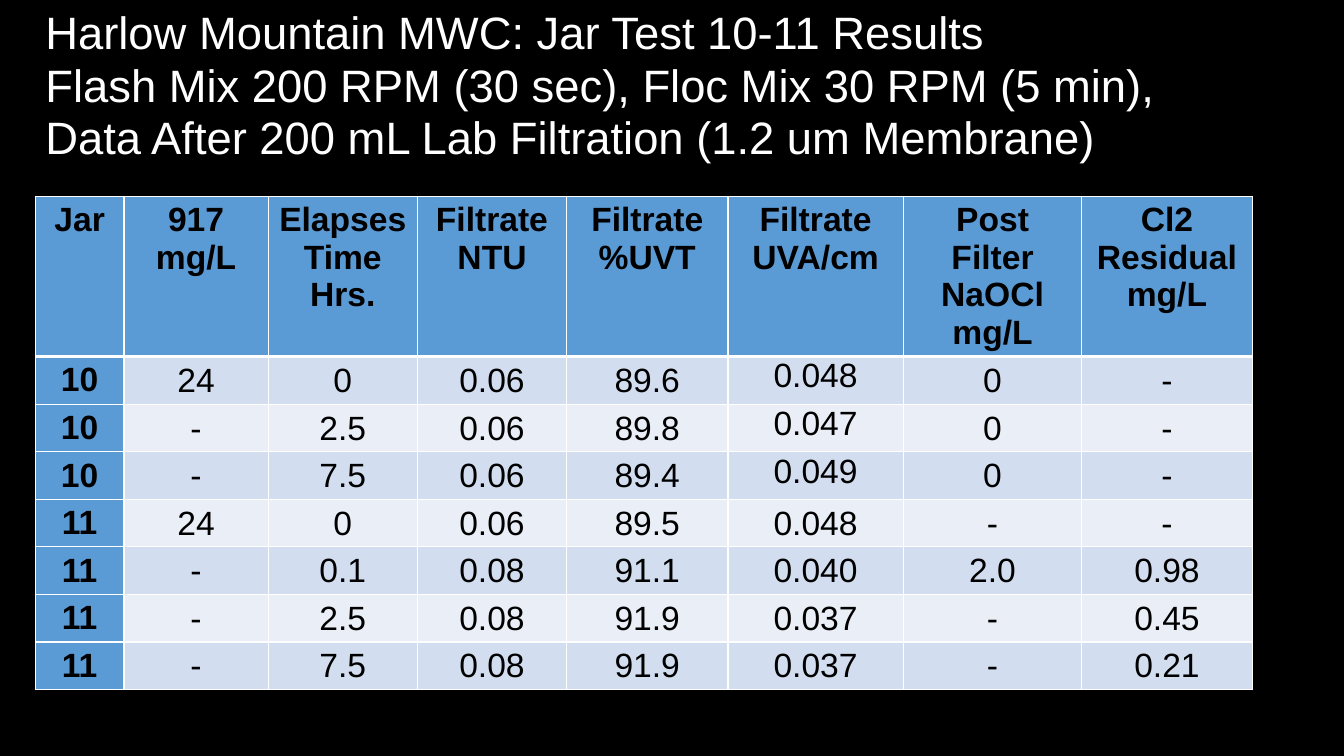
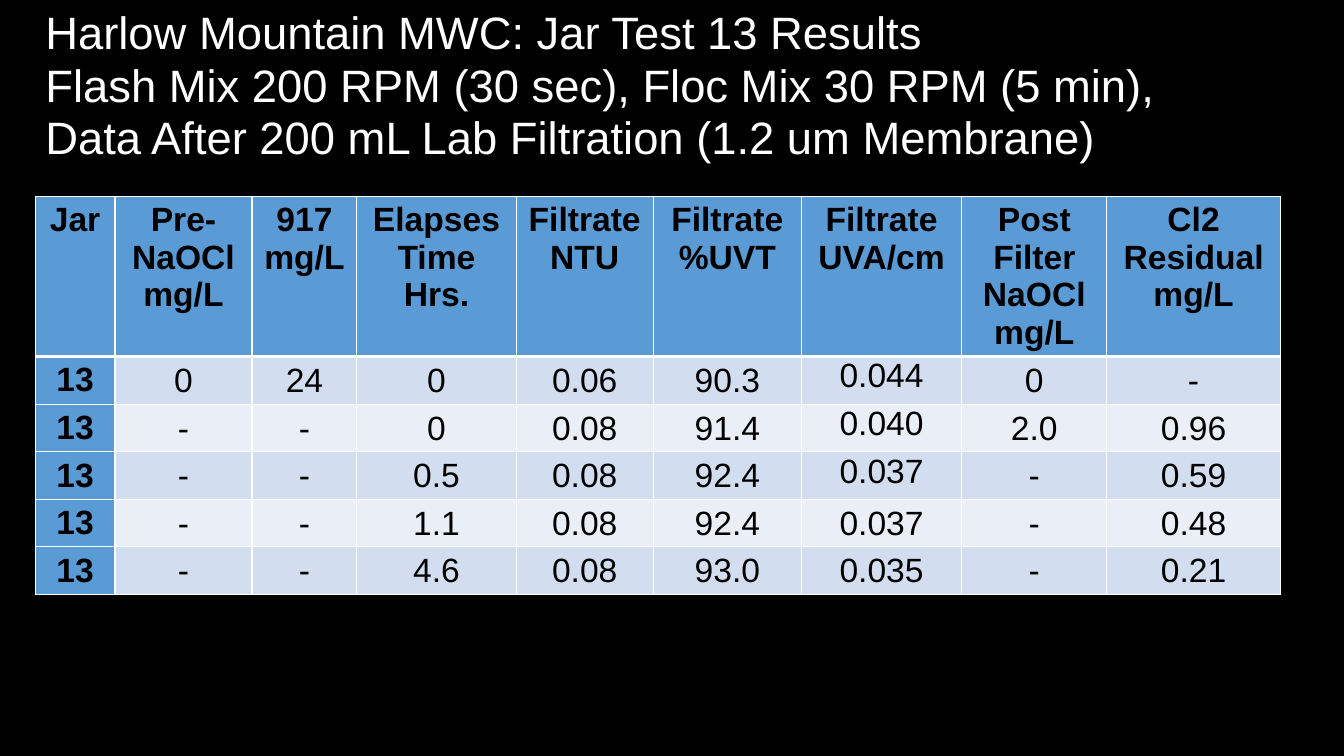
from copy import deepcopy

from pptx import Presentation
from pptx.dml.color import RGBColor
from pptx.enum.text import MSO_ANCHOR as Anchor, MSO_AUTO_SIZE as AutoSize, PP_ALIGN as Align
from pptx.oxml import parse_xml
from pptx.oxml.ns import nsdecls, qn
from pptx.util import Inches, Pt

COLORS = {
    "background": "000000",
    "title": "FFFFFF",
    "text": "000000",
    "border": "FFFFFF",
    "header": "5B9BD5",
    "odd_row": "D2DEEF",
    "even_row": "EAEFF7",
}
CONDITIONS = (
    "Flash Mix 200 RPM (30 sec), Floc Mix 30 RPM (5 min), "
    "Data After 200 mL Lab Filtration (1.2 um Membrane)"
)
DOSE_HEADER = "917\nmg/L"
RESULT_HEADERS = [
    "Elapses\nTime\nHrs.",
    "Filtrate\nNTU",
    "Filtrate\n%UVT",
    "Filtrate\nUVA/cm",
    "Post Filter NaOCl\nmg/L",
    "Cl2\nResidual\nmg/L",
]
TOP_ANCHORED_ROWS = (1, 2, 3)


def color(name):
    return RGBColor.from_string(COLORS[name])


class JarTestDeck:
    font = "Arial"
    left = 0.35
    title_size = 32.4
    table_size = 24
    header_height = 1.54
    row_height = 0.45

    def __init__(self):
        self.presentation = Presentation()
        self.presentation.slide_width = Inches(13.33)
        self.presentation.slide_height = Inches(7.5)
        fill = self.presentation.slide_master.background.fill
        fill.solid()
        fill.fore_color.rgb = color("background")
        self.slide = None

    def add_slide(self, title):
        layout = self.presentation.slide_layouts.get_by_name("Title Only")
        self.slide = self.presentation.slides.add_slide(layout)
        self.set_title(title)

    def style_run(self, run, size, color_name, bold=False):
        run.font.name = self.font
        run.font.size = Pt(size)
        run.font.bold = bold
        run.font.color.rgb = color(color_name)

    def set_title(self, title):
        shape = self.slide.shapes.title
        shape.left, shape.top = Inches(self.left), Inches(0.13)
        shape.width, shape.height = Inches(12.06), Inches(1.45)
        frame = shape.text_frame
        frame.word_wrap = True
        frame.auto_size = AutoSize.NONE
        frame.vertical_anchor = Anchor.MIDDLE
        paragraph = frame.paragraphs[0]
        paragraph.text = f"{title}\n{CONDITIONS}"
        paragraph.alignment = Align.LEFT
        paragraph.line_spacing = 0.97
        for run in paragraph.runs:
            self.style_run(run, self.title_size, "title")
        for line_break in paragraph._p.findall(qn("a:br")):
            line_break.append(deepcopy(paragraph.runs[0]._r.rPr))

    def add_border(self, cell, side, width):
        cell._tc.get_or_add_tcPr().append(parse_xml(
            f'<a:{side} {nsdecls("a")} w="{Pt(width)}"><a:solidFill>'
            f'<a:srgbClr val="{COLORS["border"]}"/></a:solidFill></a:{side}>'
        ))

    def format_cell(self, cell, text, row, fill_name, bold):
        widths = {"lnL": 1, "lnR": 1, "lnT": 3 if row == 1 else 1, "lnB": 3 if row == 0 else 1}
        for side, width in widths.items():
            self.add_border(cell, side, width)
        cell.fill.solid()
        cell.fill.fore_color.rgb = color(fill_name)
        cell.text_frame.text = text
        for paragraph in cell.text_frame.paragraphs:
            paragraph.alignment = Align.CENTER
            for run in paragraph.runs:
                self.style_run(run, self.table_size, "text", bold)

    def add_results(self, headers, widths, records):
        rows = [headers, *records]
        height = self.header_height + self.row_height * len(records)
        frame = self.slide.shapes.add_table(
            len(rows), len(headers), Inches(self.left), Inches(1.95),
            Inches(sum(widths)), Inches(height),
        )
        table = frame.table
        table.first_col = True
        for column, width in zip(table.columns, widths):
            column.width = Inches(width)
        absorbance_column = headers.index("Filtrate\nUVA/cm")
        for row, values in enumerate(rows):
            table.rows[row].height = Inches(self.row_height if row else self.header_height)
            band = "odd_row" if row % 2 else "even_row"
            for column, text in enumerate(values):
                cell = table.cell(row, column)
                is_header = row == 0 or column == 0
                self.format_cell(cell, text, row, "header" if is_header else band, is_header)
                if is_header:
                    continue
                cell.margin_left = cell.margin_right = cell.margin_top = Inches(0.01)
                cell.margin_bottom = 0
                at_top = column == absorbance_column and row in TOP_ANCHORED_ROWS
                cell.vertical_anchor = Anchor.TOP if at_top else Anchor.MIDDLE


def main():
    deck = JarTestDeck()

    deck.add_slide("Harlow Mountain MWC: Jar Test 10-11 Results")
    deck.add_results(
        ["Jar", DOSE_HEADER, *RESULT_HEADERS],
        [0.88, 1.43, 1.48, 1.48, 1.6, 1.74, 1.77, 1.69],
        [
            ["10", "24", "0", "0.06", "89.6", "0.048", "0", "-"],
            ["10", "-", "2.5", "0.06", "89.8", "0.047", "0", "-"],
            ["10", "-", "7.5", "0.06", "89.4", "0.049", "0", "-"],
            ["11", "24", "0", "0.06", "89.5", "0.048", "-", "-"],
            ["11", "-", "0.1", "0.08", "91.1", "0.040", "2.0", "0.98"],
            ["11", "-", "2.5", "0.08", "91.9", "0.037", "-", "0.45"],
            ["11", "-", "7.5", "0.08", "91.9", "0.037", "-", "0.21"],
        ],
    )

    deck.add_slide("Harlow Mountain MWC: Jar Test 13 Results")
    deck.add_results(
        ["Jar", "Pre- NaOCl\nmg/L", DOSE_HEADER, *RESULT_HEADERS],
        [0.79, 1.36, 1.04, 1.58, 1.36, 1.47, 1.59, 1.44, 1.72],
        [
            ["13", "0", "24", "0", "0.06", "90.3", "0.044", "0", "-"],
            ["13", "-", "-", "0", "0.08", "91.4", "0.040", "2.0", "0.96"],
            ["13", "-", "-", "0.5", "0.08", "92.4", "0.037", "-", "0.59"],
            ["13", "-", "-", "1.1", "0.08", "92.4", "0.037", "-", "0.48"],
            ["13", "-", "-", "4.6", "0.08", "93.0", "0.035", "-", "0.21"],
        ],
    )

    deck.presentation.save("out.pptx")


if __name__ == "__main__":
    main()
